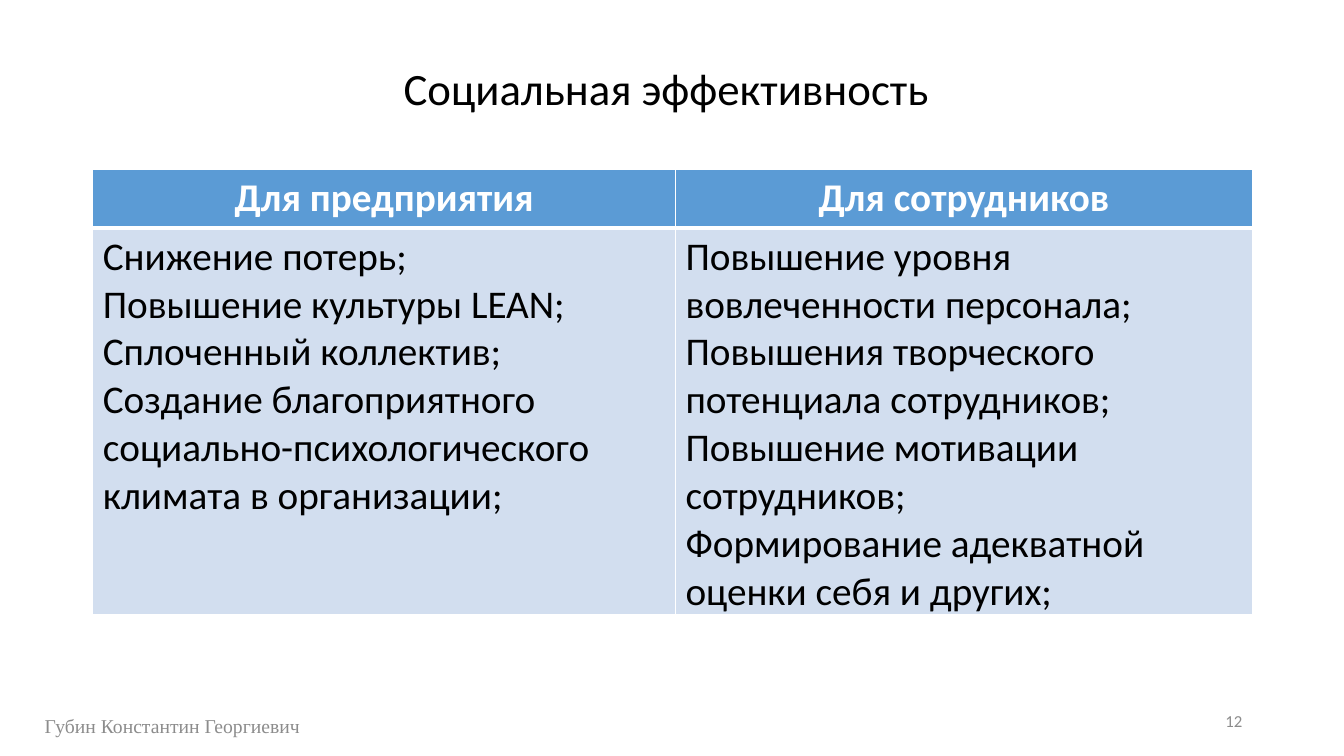
from lxml.etree import SubElement
from pptx import Presentation
from pptx.dml.color import RGBColor
from pptx.enum.text import MSO_ANCHOR, PP_ALIGN
from pptx.oxml.ns import qn
from pptx.util import Inches, Pt

BLACK = RGBColor(0x00, 0x00, 0x00)
WHITE = RGBColor(0xFF, 0xFF, 0xFF)
GREY = RGBColor(0x8C, 0x8C, 0x8C)
HEADER_BLUE = RGBColor(0x5B, 0x9B, 0xD5)
BODY_BLUE = RGBColor(0xD2, 0xDE, 0xEF)

BENEFITS = {
    "Для предприятия": [
        "Снижение потерь;",
        "Повышение культуры LEAN;",
        "Сплоченный коллектив;",
        "Cоздание благоприятного социально-психологического климата в организации;",
    ],
    "Для сотрудников": [
        "Повышение уровня вовлеченности персонала;",
        "Повышения творческого потенциала сотрудников;",
        "Повышение мотивации сотрудников;",
        "Формирование адекватной оценки себя и других;",
    ],
}
COLUMN_WIDTHS = [5.78, 5.72]
HEADER_HEIGHT = 0.58


def format_text(frame, size, color, align, font="Calibri", bold=False):
    for paragraph in frame.paragraphs:
        paragraph.alignment = align
        for run in paragraph.runs:
            run.font.size = Pt(size)
            run.font.name = font
            run.font.bold = bold
            run.font.color.rgb = color


def add_label(slide, box, text, size, color, align, font="Calibri"):
    label = slide.shapes.add_textbox(*map(Inches, box)).text_frame
    label.word_wrap = True
    label.vertical_anchor = MSO_ANCHOR.MIDDLE
    label.text = text
    format_text(label, size, color, align, font)
    return label


def set_borders(cell, top, bottom):
    """Draw white cell borders; call before the fill, which must follow them."""
    properties = cell._tc.get_or_add_tcPr()
    for side, width in (("L", 1), ("R", 1), ("T", top), ("B", bottom)):
        line = SubElement(properties, qn(f"a:ln{side}"), w=str(Pt(width)))
        fill = SubElement(line, qn("a:solidFill"))
        SubElement(fill, qn("a:srgbClr"), val=str(WHITE))


def fill_cell(cell, text, background, color, align, bold, top, bottom):
    set_borders(cell, top, bottom)
    cell.fill.solid()
    cell.fill.fore_color.rgb = background
    cell.text_frame.text = text
    format_text(cell.text_frame, 28, color, align, bold=bold)


def add_benefits_table(slide, box):
    frame = slide.shapes.add_table(2, len(BENEFITS), *map(Inches, box))
    table = frame.table
    table.rows[0].height = Inches(HEADER_HEIGHT)
    table.rows[1].height = Inches(box[3] - HEADER_HEIGHT)
    for column, (audience, benefits) in enumerate(BENEFITS.items()):
        table.columns[column].width = Inches(COLUMN_WIDTHS[column])
        fill_cell(table.cell(0, column), audience, HEADER_BLUE, WHITE,
                  PP_ALIGN.CENTER, True, top=1, bottom=3)
        fill_cell(table.cell(1, column), "\n".join(benefits), BODY_BLUE, BLACK,
                  PP_ALIGN.LEFT, False, top=3, bottom=1)


def main():
    presentation = Presentation()
    presentation.slide_width = Inches(13.33)
    presentation.slide_height = Inches(7.5)
    slide = presentation.slides.add_slide(presentation.slide_layouts[6])

    # Title
    title = add_label(slide, (0.86, 0.59, 11.5, 0.62), "Социальная эффективность",
                      32, BLACK, PP_ALIGN.CENTER)
    title.paragraphs[0].line_spacing = 0.9

    # Benefits by audience
    add_benefits_table(slide, (0.92, 1.68, 11.5, 4.41))

    # Footer: author and page number
    add_label(slide, (-0.54, 7, 4.5, 0.4), "Губин Константин Георгиевич",
              14, GREY, PP_ALIGN.CENTER, "Times New Roman")
    add_label(slide, (9.42, 6.95, 3, 0.4), "12", 12, GREY, PP_ALIGN.RIGHT)

    presentation.save("out.pptx")


if __name__ == "__main__":
    main()
